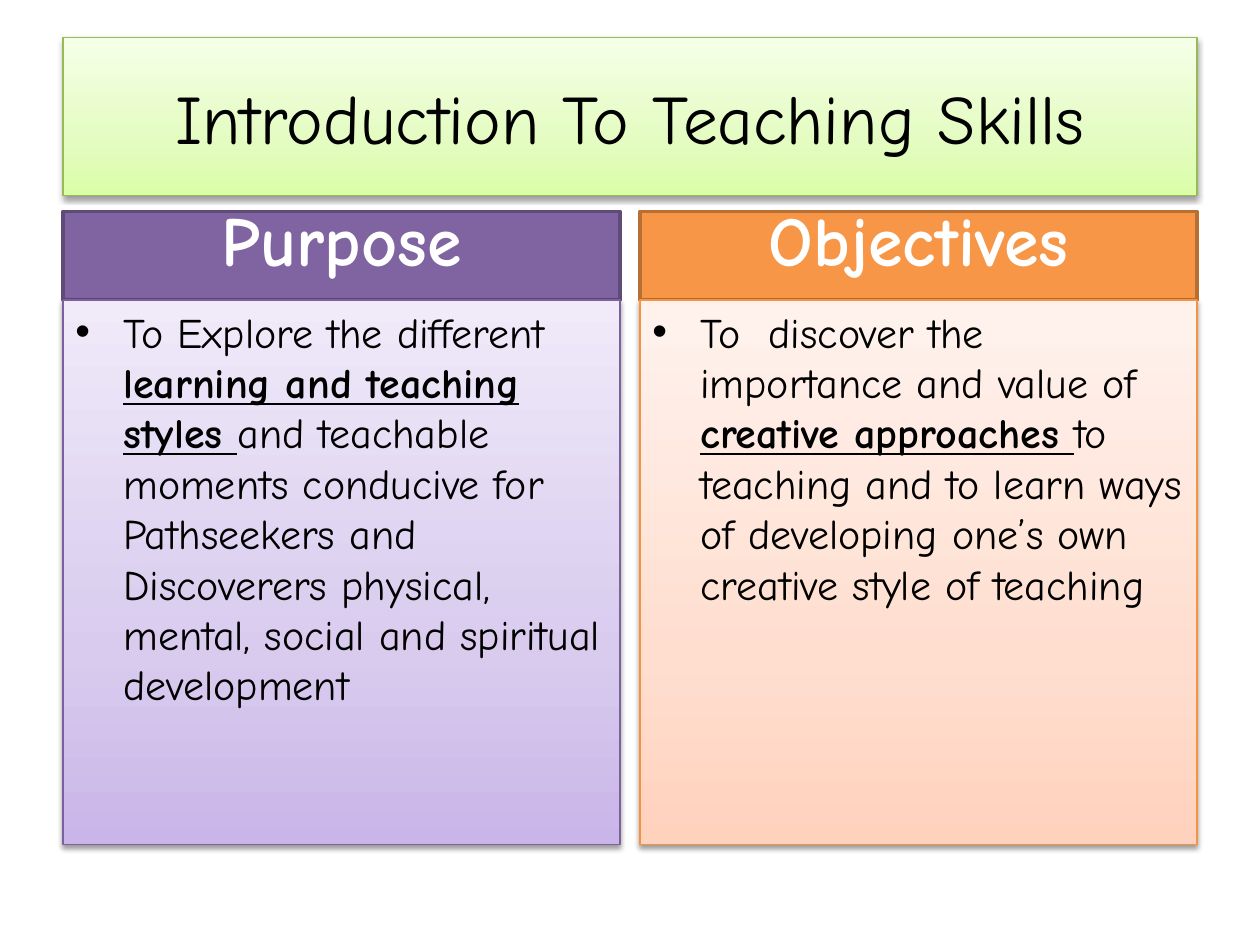
import pptx
import pptx.dml.color
import pptx.enum.shapes
import pptx.enum.text
import pptx.oxml
import pptx.oxml.ns
import pptx.util
from copy import deepcopy

RGB = pptx.dml.color.RGBColor
Inches = pptx.util.Inches
Pt = pptx.util.Pt
Align = pptx.enum.text.PP_ALIGN
Anchor = pptx.enum.text.MSO_ANCHOR
qn = pptx.oxml.ns.qn

FONT = "Comic Neue"
BLACK = RGB(0x00, 0x00, 0x00)
WHITE = RGB(0xFF, 0xFF, 0xFF)
LIME = RGB(0x98, 0xB9, 0x55)
LIMES = RGB(0xDA, 0xFD, 0xA7), RGB(0xE4, 0xFC, 0xC2), RGB(0xF5, 0xFF, 0xE7)
PLUM = RGB(0x80, 0x64, 0xA2)
PLUM_DARK = RGB(0x5F, 0x4A, 0x78)
PLUM_EDGE = RGB(0x7D, 0x60, 0xA0)
PLUMS = RGB(0xC9, 0xB5, 0xE8), RGB(0xD8, 0xCB, 0xEE), RGB(0xF0, 0xEA, 0xF9)
PEACH = RGB(0xF7, 0x96, 0x46)
PEACH_DARK = RGB(0xB7, 0x6F, 0x34)
PEACH_EDGE = RGB(0xF6, 0x92, 0x40)
PEACHES = RGB(0xFF, 0xD2, 0xBD), RGB(0xFF, 0xDE, 0xD0), RGB(0xFF, 0xF2, 0xED)

WIDE, HIGH = 10, 7.5
EDGE = 0.5
COL, GAP = 4.42, 0.16
HEAD_TOP, HEAD = 1.68, 0.7
BODY = 4.32

NS = pptx.oxml.ns.nsdecls("a")
SHADOW = (
    f'<a:outerShdw {NS} blurRad="40000" dist="20000" dir="5400000" rotWithShape="0">'
    '<a:srgbClr val="000000"><a:alpha val="38000"/></a:srgbClr></a:outerShdw>'
)
MARKS = f'<a:buFont {NS} typeface="Arial"/>', f'<a:buChar {NS} char="•"/>'


def add_box(slide, left, top, width, height, edge, weight, anchor):
    kind = pptx.enum.shapes.MSO_SHAPE.RECTANGLE
    box = slide.shapes.add_shape(kind, *map(Inches, (left, top, width, height)))
    box.shadow.inherit = False
    box.line.color.rgb = edge
    box.line.width = Pt(weight)
    box.text_frame.word_wrap = True
    box.text_frame.vertical_anchor = anchor
    return box


def shade(box, tones):
    box.fill.gradient()
    box.fill.gradient_angle = 90
    props = box._element.spPr
    stops = props.find(qn("a:gradFill")).find(qn("a:gsLst"))
    stops.insert(1, deepcopy(stops[0]))
    for stop, tone, place in zip(box.fill.gradient_stops, tones, (0, 0.35, 1)):
        stop.color.rgb = tone
        stop.position = place
    props.find(qn("a:effectLst")).append(pptx.oxml.parse_xml(SHADOW))


def style(para, size, color, align, bold=False):
    para.alignment = align
    para.font.name = FONT
    para.font.size = Pt(size)
    para.font.color.rgb = color
    para.font.bold = bold


def add_title(slide, text):
    box = add_box(slide, EDGE, 0.3, WIDE - 2 * EDGE, HIGH / 6, LIME, 0.75, Anchor.MIDDLE)
    shade(box, LIMES)
    box.text_frame.text = text
    style(box.text_frame.paragraphs[0], 39.6, BLACK, Align.CENTER)


def add_head(slide, left, text, fill, edge):
    box = add_box(slide, left, HEAD_TOP, COL, HEAD, edge, 2, Anchor.BOTTOM)
    box.fill.solid()
    box.fill.fore_color.rgb = fill
    box.text_frame.margin_bottom = Inches(0.15)
    box.text_frame.text = text
    style(box.text_frame.paragraphs[0], 40, WHITE, Align.CENTER, True)


def add_body(slide, left, parts, tones, edge):
    box = add_box(slide, left, HEAD_TOP + HEAD, COL, BODY, edge, 0.75, Anchor.TOP)
    shade(box, tones)
    para = box.text_frame.paragraphs[0]
    style(para, 24, BLACK, Align.LEFT)
    para.space_before = Pt(4.8)
    props = para._p.get_or_add_pPr()
    props.set("marL", str(Inches(0.38)))
    props.set("indent", str(Inches(-0.38)))
    for mark in MARKS:
        props.find(qn("a:defRPr")).addprevious(pptx.oxml.parse_xml(mark))
    for text, strong in zip(parts, (False, True, False)):
        run = para.add_run()
        run.text = text
        if strong:
            run.font.bold = True
            run.font.underline = True


def main():
    deck = pptx.Presentation()
    deck.slide_width, deck.slide_height = Inches(WIDE), Inches(HIGH)
    slide = deck.slides.add_slide(deck.slide_layouts[6])
    add_title(slide, "Introduction To Teaching Skills")
    cols = (
        ("Purpose", PLUM, PLUM_DARK, PLUMS, PLUM_EDGE, (
            "To Explore the different ",
            "learning and teaching styles ",
            "and teachable moments conducive for Pathseekers and Discoverers "
            "physical, mental, social and spiritual development")),
        ("Objectives", PEACH, PEACH_DARK, PEACHES, PEACH_EDGE, (
            "To  discover the importance and value of ",
            "creative approaches ",
            "to teaching and to learn ways of developing one’s own "
            "creative style of teaching")),
    )
    for i, (head, fill, dark, tones, edge, parts) in enumerate(cols):
        left = EDGE + i * (COL + GAP)
        add_head(slide, left, head, fill, dark)
        add_body(slide, left, parts, tones, edge)
    deck.save("out.pptx")


if __name__ == "__main__":
    main()
